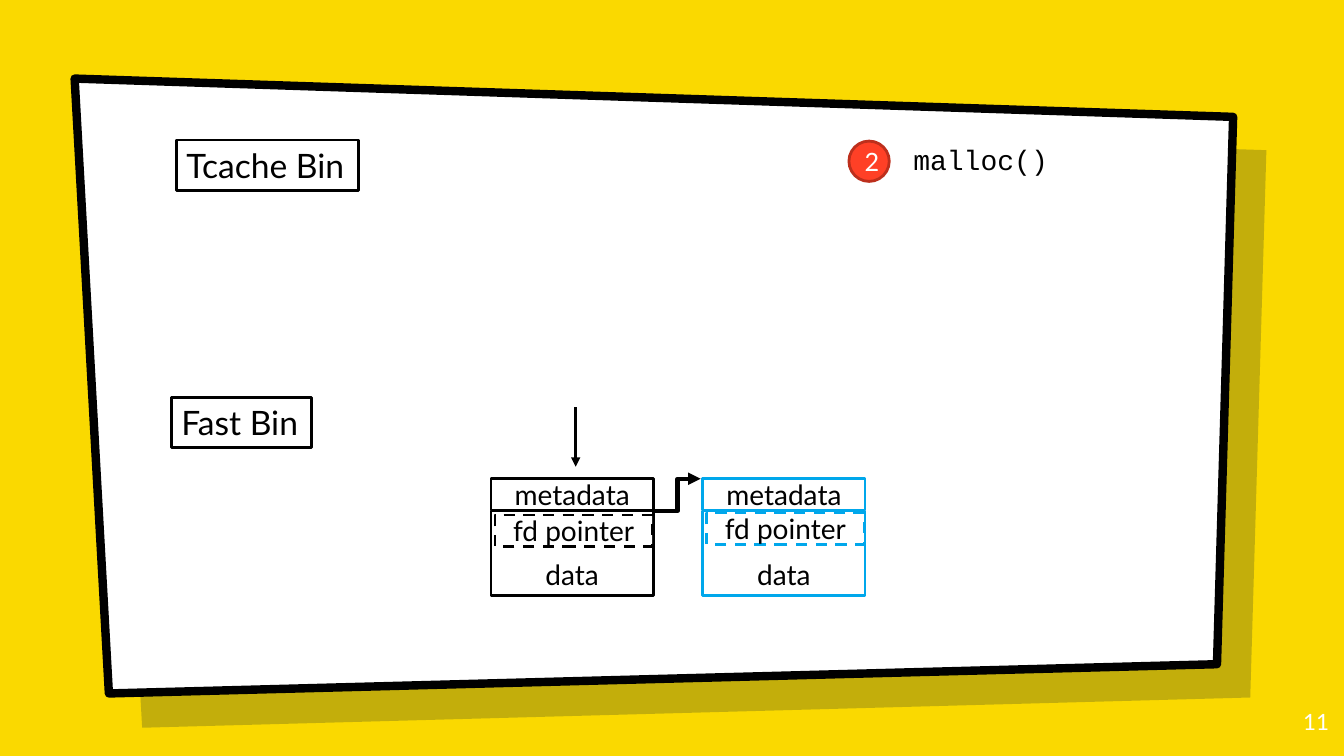
from lxml import etree
from pptx import Presentation
from pptx.dml.color import RGBColor
from pptx.enum import dml, shapes, text
from pptx.oxml.ns import qn
from pptx.util import Inches, Pt

YELLOW = RGBColor(0xFA, 0xD9, 0x00)
NAVY = RGBColor(0x00, 0x19, 0x36)
WHITE = RGBColor(0xFF, 0xFF, 0xFF)
BLACK = RGBColor(0, 0, 0)
BLUE = RGBColor(0x00, 0xA7, 0xEB)
RED = RGBColor(0xFF, 0x40, 0x26)
DARK_RED = RGBColor(0xBD, 0x2F, 0x1C)

RECT = shapes.MSO_SHAPE.RECTANGLE
OVAL = shapes.MSO_SHAPE.OVAL
LEFT, CENTER, RIGHT = text.PP_ALIGN.LEFT, text.PP_ALIGN.CENTER, text.PP_ALIGN.RIGHT
TOP, MIDDLE, BOTTOM = text.MSO_ANCHOR.TOP, text.MSO_ANCHOR.MIDDLE, text.MSO_ANCHOR.BOTTOM

SHADOW = [(1.07, 1.11), (12.56, 1.49), (12.4, 6.92), (1.41, 7.22)]
PANEL = [(0.74, 0.78), (12.23, 1.16), (12.07, 6.59), (1.08, 6.88)]
BINS = [("Fast Bin", (1.7, 3.94, 1.39, 0.5)), ("Tcache Bin", (1.75, 1.39, 1.81, 0.5))]
CHUNKS = [(4.87, BLACK, 0.36), (6.97, BLUE, 0.34)]
CHUNK_TOP, CHUNK_W, ROW_H = 4.75, 1.61, 0.31
DATA_DY, DATA_H = 0.32, 0.84
NEXT_LINK = (6.49, 5.07, 6.95, 4.75)
HEAD_ARROW = (5.71, 4.04, 5.71, 4.63)

prs = Presentation()
prs.slide_width, prs.slide_height = Inches(13.33), Inches(7.5)
s = prs.slides.add_slide(prs.slide_layouts[6])
s.background.fill.solid()
s.background.fill.fore_color.rgb = YELLOW


def paint(sp, fill, line=None, width=2):
    sp.shadow.inherit = False
    sp.fill.solid()
    sp.fill.fore_color.rgb = fill
    if line is None:
        sp.line.fill.background()
    else:
        sp.line.color.rgb = line
        sp.line.width = Pt(width)


def write(sp, words, size, color=BLACK, align=CENTER, anchor=MIDDLE, font="Lato"):
    tf = sp.text_frame
    tf.word_wrap = True
    tf.vertical_anchor = anchor
    p = tf.paragraphs[0]
    p.text = words
    p.alignment = align
    p.font.size = Pt(size)
    p.font.name = font
    p.font.color.rgb = color
    return tf


def box(parent, kind, at, fill=WHITE, line=BLACK):
    sp = parent.shapes.add_shape(kind, *map(Inches, at))
    paint(sp, fill, line)
    return sp


def quad(points):
    corners = [(Inches(x), Inches(y)) for x, y in points]
    fb = s.shapes.build_freeform(*corners[0])
    fb.add_line_segments(corners[1:], close=True)
    return fb.convert_to_shape()


def arrow(kind, ends, width):
    c = s.shapes.add_connector(kind, *map(Inches, ends))
    c.line.color.rgb = BLACK
    c.line.width = Pt(width)
    etree.SubElement(c.line._get_or_add_ln(), qn("a:tailEnd"), type="triangle")
    etree.SubElement(c._element.spPr, qn("a:effectLst"))


def chunk(left, color, pointer_dy):
    g = s.shapes.add_group_shape()
    data = box(g, RECT, (left, CHUNK_TOP + DATA_DY, CHUNK_W, DATA_H), line=color)
    write(data, "data", 20, anchor=BOTTOM)
    meta = box(g, RECT, (left, CHUNK_TOP, CHUNK_W, ROW_H), line=color)
    write(meta, "metadata", 20)
    pointer = box(g, RECT, (left + 0.04, CHUNK_TOP + pointer_dy, CHUNK_W - 0.05, ROW_H), line=color)
    pointer.line.dash_style = dml.MSO_LINE.DASH
    write(pointer, "fd pointer", 20)


shade = quad(SHADOW)
paint(shade, NAVY)
shade.line.fill.background()
shade_color = shade._element.spPr.find(qn("a:solidFill"))[0]
etree.SubElement(shade_color, qn("a:alpha"), val="22000")
paint(quad(PANEL), WHITE, BLACK, 6)

number = s.shapes.add_textbox(*map(Inches, (12.48, 6.93, 0.8, 0.57)))
tf = write(number, "11", 16, WHITE, RIGHT, TOP)
tf.margin_left = tf.margin_right = tf.margin_top = tf.margin_bottom = Inches(0.1)

for words, at in BINS:
    tf = write(box(s, RECT, at), words, 24, align=LEFT, anchor=TOP)
    tf.word_wrap = False
    tf.auto_size = text.MSO_AUTO_SIZE.SHAPE_TO_FIT_TEXT

arrow(shapes.MSO_CONNECTOR.ELBOW, NEXT_LINK, 3)
for left, color, pointer_dy in CHUNKS:
    chunk(left, color, pointer_dy)

step = box(s, OVAL, (8.42, 1.4, 0.4, 0.4), RED, DARK_RED)
write(step, "2", 18, WHITE)
call = box(s, RECT, (8.96, 1.32, 2.7, 0.53), line=None)
write(call, "malloc()", 20, align=LEFT, font="Courier New")
arrow(shapes.MSO_CONNECTOR.STRAIGHT, HEAD_ARROW, 2.25)

prs.save("out.pptx")
